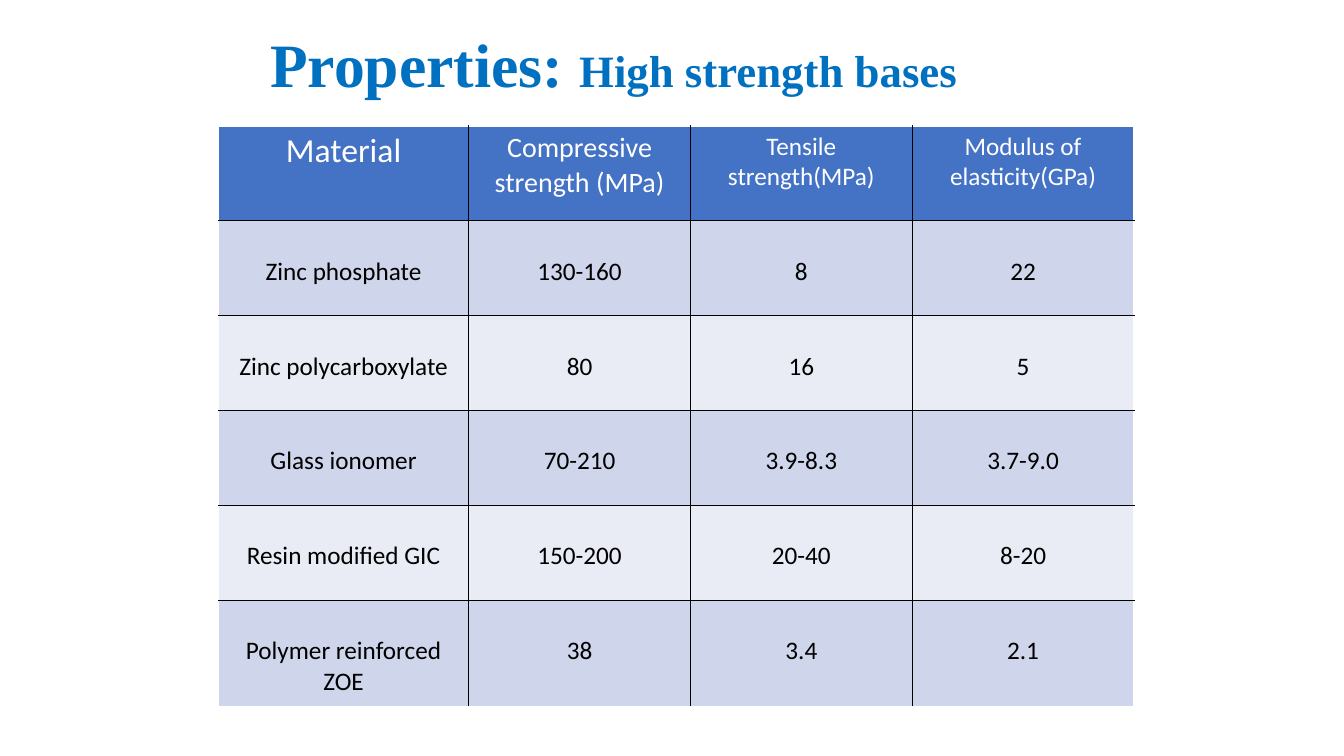
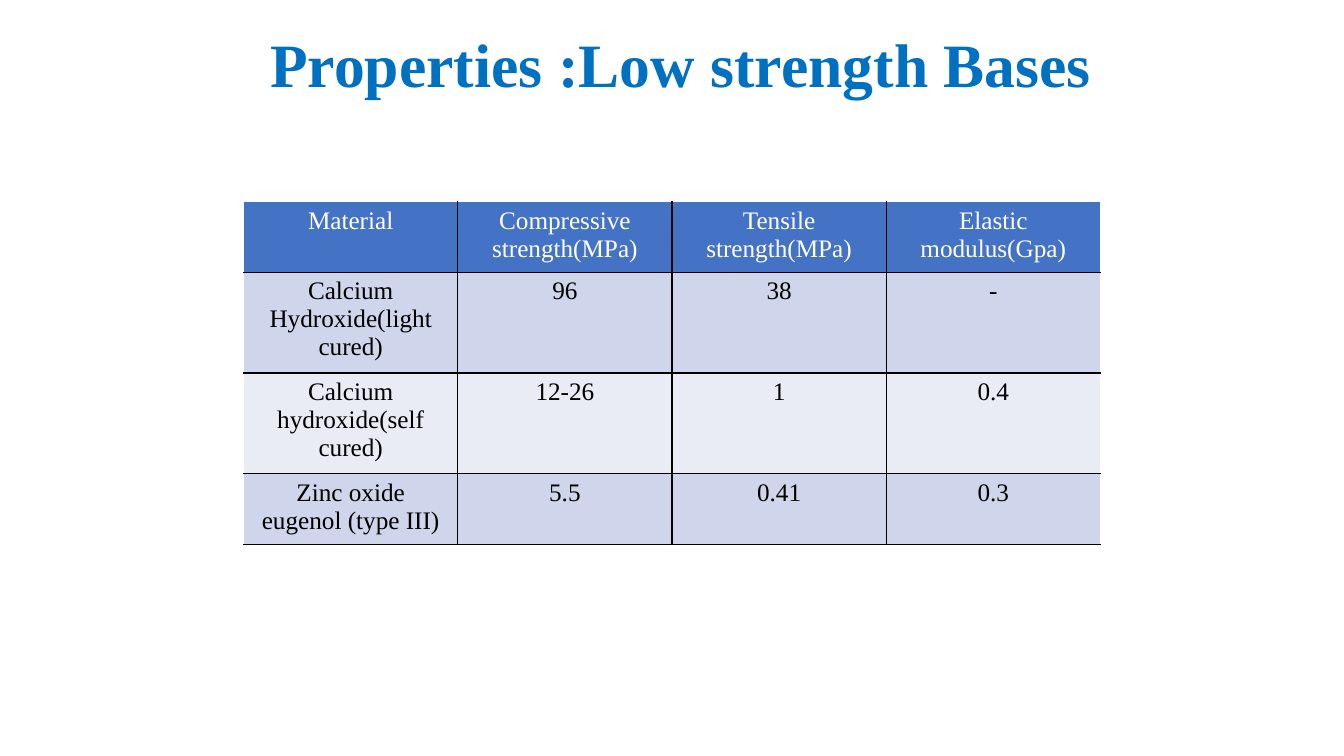
from lxml import etree
from pptx import Presentation
from pptx.dml.color import RGBColor
from pptx.enum.text import MSO_ANCHOR, PP_ALIGN
from pptx.oxml.ns import qn
from pptx.util import Inches, Pt

CENTER = PP_ALIGN.CENTER
MIDDLE = MSO_ANCHOR.MIDDLE

COLORS = {
    "title": "0070C0",
    "header": "4472C4",
    "band_dark": "CFD5EA",
    "band_light": "E9EBF5",
    "white": "FFFFFF",
    "black": "000000",
}
SERIF, SANS = "Times New Roman", "Calibri"
BODY_SIZE = 18
GRID_COLUMNS, GRID_ROWS = 160, 90

HIGH_STRENGTH = [
    ["Material", "Compressive strength (MPa)", "Tensile strength(MPa)",
     "Modulus of elasticity(GPa)"],
    ["Zinc phosphate", "130-160", "8", "22"],
    ["Zinc polycarboxylate", "80", "16", "5"],
    ["Glass ionomer", "70-210", "3.9-8.3", "3.7-9.0"],
    ["Resin modified GIC", "150-200", "20-40", "8-20"],
    ["Polymer reinforced ZOE", "38", "3.4", "2.1"],
]
LOW_STRENGTH = [
    ["Material", "Compressive strength(MPa)", "Tensile strength(MPa)",
     "Elastic modulus(Gpa)"],
    ["Calcium Hydroxide(light cured)", "96", "38", "-"],
    ["Calcium hydroxide(self cured)", "12-26", "1", "0.4"],
    ["Zinc oxide eugenol (type III)", "5.5", "0.41", "0.3"],
]


def rgb(color):
    return RGBColor.from_string(COLORS[color])


class Deck:
    """Holds the shared style and the slide being filled; lengths are grid units."""

    def __init__(self):
        self.presentation = Presentation()
        self.presentation.slide_width = Inches(13.33)
        self.presentation.slide_height = Inches(7.5)
        self.slide = None

    def x(self, columns):
        return round(self.presentation.slide_width * columns / GRID_COLUMNS)

    def y(self, rows):
        return round(self.presentation.slide_height * rows / GRID_ROWS)

    def new_slide(self):
        self.slide = self.presentation.slides.add_slide(
            self.presentation.slide_layouts[6])

    def title(self, *parts):
        """Write (text, size) parts on one title line."""
        box = self.slide.shapes.add_textbox(
            self.x(31), self.y(3), self.x(102), self.y(10))
        frame = box.text_frame
        frame.word_wrap = True
        frame.vertical_anchor = MIDDLE
        line = frame.paragraphs[0]
        line.line_spacing = 0.9
        self.style_font(line.font, SERIF, "title", bold=True)
        for text, size in parts:
            run = line.add_run()
            run.text = text
            run.font.size = Pt(size)

    def table(self, content, left, top, widths, heights, font_name,
              header_sizes, body_margin=0.05, bottom="black"):
        shape = self.slide.shapes.add_table(
            len(content), len(widths), self.x(left), self.y(top),
            self.x(sum(widths)), self.y(sum(heights)))
        table = shape.table
        for column, width in zip(table.columns, widths):
            column.width = self.x(width)
        for row, height in zip(table.rows, heights):
            row.height = self.y(height)
        last_row, last_column = len(content) - 1, len(widths) - 1

        for r, texts in enumerate(content):
            is_header = r == 0
            band = "header" if is_header else ("band_light", "band_dark")[r % 2]
            for c, text in enumerate(texts):
                cell = table.cell(r, c)
                self.borders(
                    cell,
                    L="white" if c == 0 else "black",
                    R="white" if c == last_column else "black",
                    T="white" if is_header else "black",
                    B=bottom if r == last_row else "black")
                cell.fill.solid()
                cell.fill.fore_color.rgb = rgb(band)
                cell.margin_top = Inches(0.05 if is_header else body_margin)
                cell.text = text
                paragraph = cell.text_frame.paragraphs[0]
                paragraph.alignment = CENTER
                paragraph.font.size = Pt(header_sizes[c] if is_header else BODY_SIZE)
                self.style_font(paragraph.font, font_name,
                                "white" if is_header else "black")

    @staticmethod
    def style_font(font, name, color, bold=False):
        font.name = name
        font.bold = bold
        font.color.rgb = rgb(color)

    @staticmethod
    def borders(cell, **side_colors):
        """Draw 1 pt cell edges; sides are given in schema order L, R, T, B."""
        properties = cell._tc.get_or_add_tcPr()
        for side, color in side_colors.items():
            line = etree.SubElement(properties, qn(f"a:ln{side}"), w=str(Pt(1)))
            fill = etree.SubElement(line, qn("a:solidFill"))
            etree.SubElement(fill, qn("a:srgbClr"), val=COLORS[color])


def main():
    deck = Deck()

    deck.new_slide()
    deck.title(("Properties: ", 44), ("High strength bases", 32))
    deck.table(HIGH_STRENGTH, 26, 15, [29.8] + [26.4] * 3, [11.3] * 5 + [12.6],
               SANS, [24, 20, 18, 18], body_margin=0.35, bottom="white")

    deck.new_slide()
    deck.title(("Properties :Low strength Bases", 44))
    deck.table(LOW_STRENGTH, 29, 24, [25.5] * 4, [8.4, 12, 12, 8.4],
               SERIF, [BODY_SIZE] * 4)

    deck.presentation.save("out.pptx")


if __name__ == "__main__":
    main()
